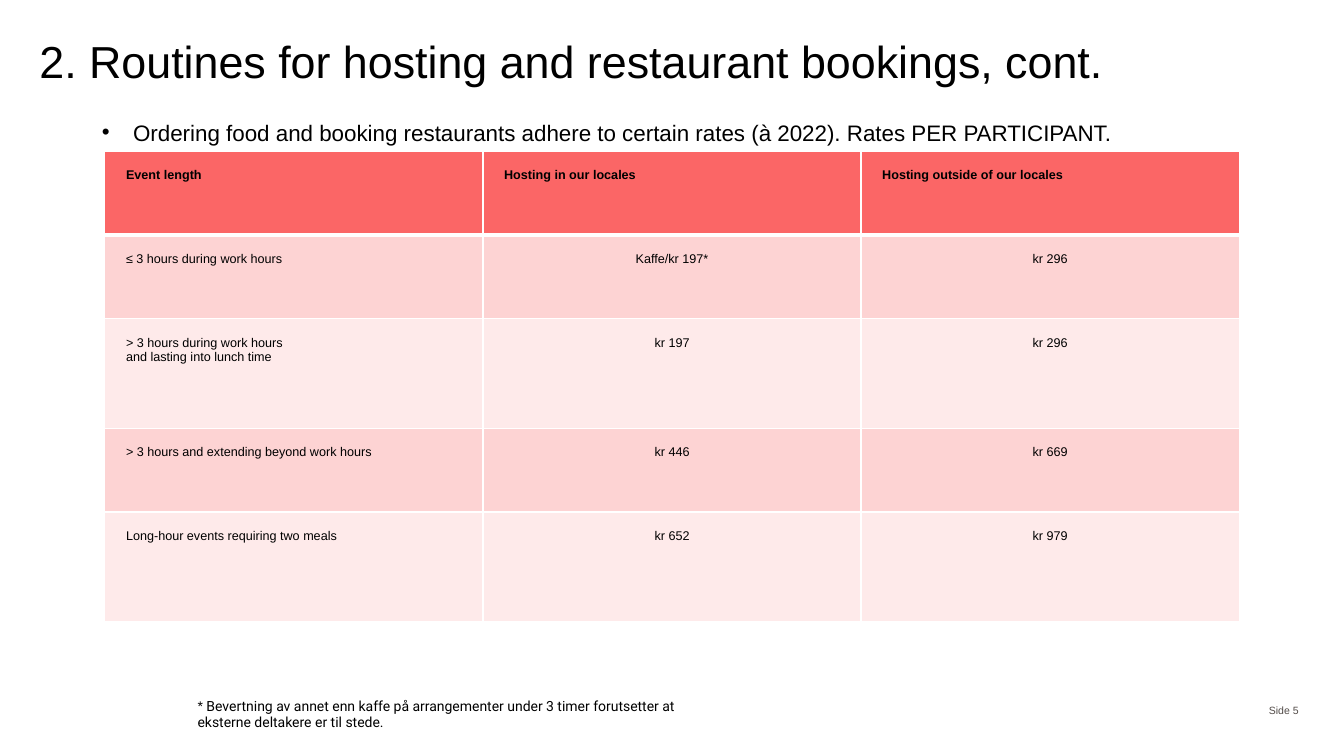
from copy import deepcopy
from dataclasses import dataclass

from pptx import Presentation
from pptx.dml.color import RGBColor
from pptx.enum.text import MSO_ANCHOR as Anchor, PP_ALIGN as Align
from pptx.oxml import parse_xml
from pptx.oxml.ns import nsdecls, qn
from pptx.util import Inches, Pt


@dataclass(frozen=True)
class Theme:
    """Colours, fonts and type sizes of the slide."""
    ink: str = "000000"
    muted: str = "524B48"
    rule: str = "FFFFFF"
    header: str = "FB6666"
    bands: tuple = ("FDD3D3", "FEEAEA")
    font: str = "Arial"
    note_font: str = "Roboto"
    title_size: float = 32
    body_size: float = 16
    note_size: float = 10
    table_size: float = 9
    number_size: float = 7.5


def write_text(paragraph, text, size, color, font, bold=False, align=Align.LEFT):
    """Append text to a paragraph, with newlines as line breaks."""
    paragraph.alignment = align
    for index, line in enumerate(text.split("\n")):
        if index:
            paragraph.add_line_break()
        run = paragraph.add_run()
        run.text = line
        run.font.size = Pt(size)
        run.font.name = font
        run.font.bold = bold
        run.font.color.rgb = RGBColor.from_string(color)
    for line_break in paragraph._p.findall(qn("a:br")):
        line_break.append(deepcopy(run._r.rPr))


class SlideBuilder:
    """Holds the theme and the current slide."""

    def __init__(self, slide, theme):
        self.slide = slide
        self.theme = theme

    def text_box(self, left, top, width, height, anchor=Anchor.TOP, margins=(0, 0)):
        """Add an empty text box and return its first paragraph."""
        shape = self.slide.shapes.add_textbox(
            Inches(left), Inches(top), Inches(width), Inches(height))
        frame = shape.text_frame
        frame.word_wrap = True
        frame.vertical_anchor = anchor
        frame.margin_left = frame.margin_right = Inches(margins[0])
        frame.margin_top = frame.margin_bottom = Inches(margins[1])
        return frame.paragraphs[0]

    def title(self, text):
        """Add the slide title."""
        paragraph = self.text_box(0.39, 0.39, 12.55, 0.59)
        paragraph.line_spacing = 0.9
        write_text(paragraph, text, self.theme.title_size, self.theme.ink, self.theme.font)

    def bullet(self, text):
        """Add the bulleted lead sentence."""
        paragraph = self.text_box(0.39, 1.18, 12.55, 5.27)
        paragraph.space_before = Pt(5)
        write_text(paragraph, text, self.theme.body_size, self.theme.ink, self.theme.font)
        properties = paragraph._p.get_or_add_pPr()
        properties.set("marL", str(Inches(0.93)))
        properties.set("indent", str(Inches(-0.31)))
        properties.append(parse_xml(f'<a:buFont {nsdecls("a")} typeface="Arial"/>'))
        properties.append(parse_xml(f'<a:buChar {nsdecls("a")} char="•"/>'))

    def footnote(self, mark, text):
        """Add the footnote with its mark."""
        paragraph = self.text_box(1.96, 6.97, 4.97, 0.28, Anchor.BOTTOM)
        for part, font in ((mark, self.theme.font), (text, self.theme.note_font)):
            write_text(paragraph, part, self.theme.note_size, self.theme.ink, font)

    def page_label(self, text):
        """Add the page label at the lower right."""
        paragraph = self.text_box(12.32, 6.85, 0.66, 0.4, Anchor.MIDDLE, (0.1, 0.05))
        write_text(paragraph, text, self.theme.number_size, self.theme.muted,
                   self.theme.font, align=Align.RIGHT)

    def cell(self, cell, text, fill, header, align):
        """Fill, border and write one table cell."""
        cell.fill.solid()
        cell.fill.fore_color.rgb = RGBColor.from_string(fill)
        cell.margin_left = cell.margin_right = Inches(0.21)
        cell.margin_top = cell.margin_bottom = Inches(0.17)
        write_text(cell.text_frame.paragraphs[0], text, self.theme.table_size,
                   self.theme.ink, self.theme.font, header, align)
        properties = cell._tc.get_or_add_tcPr()
        for index, side in enumerate(("lnL", "lnR", "lnT", "lnB")):
            width = Pt(3 if header and side == "lnB" else 1)
            properties.insert(index, parse_xml(
                f'<a:{side} {nsdecls("a")} w="{width}"><a:solidFill>'
                f'<a:srgbClr val="{self.theme.rule}"/></a:solidFill></a:{side}>'))

    def table(self, rows, heights, column_width):
        """Add the rate table with a header and banded rows."""
        columns = len(rows[0])
        table = self.slide.shapes.add_table(
            len(rows), columns, Inches(1.04), Inches(1.5),
            Inches(column_width * columns), Inches(sum(heights))).table
        for column in table.columns:
            column.width = Inches(column_width)
        for row_index, (texts, height) in enumerate(zip(rows, heights)):
            table.rows[row_index].height = Inches(height)
            header = row_index == 0
            fill = self.theme.header if header else self.theme.bands[(row_index - 1) % 2]
            for column_index, text in enumerate(texts):
                align = Align.LEFT if header or column_index == 0 else Align.CENTER
                self.cell(table.cell(row_index, column_index), text, fill, header, align)


RATES = (
    ("Event length", "Hosting in our locales", "Hosting outside of our locales"),
    ("≤ 3 hours during work hours", "Kaffe/kr 197*", "kr 296"),
    ("> 3 hours during work hours\nand lasting into lunch time", "kr 197", "kr 296"),
    ("> 3 hours and extending beyond work hours", "kr 446", "kr 669"),
    ("Long-hour events requiring two meals", "kr 652", "kr 979"),
)


def main():
    """Build and save the presentation."""
    presentation = Presentation()
    presentation.slide_width = Inches(13.33)
    presentation.slide_height = Inches(7.5)
    slide = presentation.slides.add_slide(presentation.slide_layouts[6])
    builder = SlideBuilder(slide, Theme())
    builder.bullet("Ordering food and booking restaurants adhere to certain rates "
                   "(à 2022). Rates PER PARTICIPANT.")
    builder.footnote("*", " Bevertning av annet enn kaffe på arrangementer under 3 timer "
                          "forutsetter at eksterne deltakere er til stede.")
    builder.page_label("Side 5")
    builder.title("2. Routines for hosting and restaurant bookings, cont.")
    builder.table(RATES, (0.83, 0.83, 1.09, 0.83, 1.09), 3.75)
    presentation.save("out.pptx")


if __name__ == "__main__":
    main()
